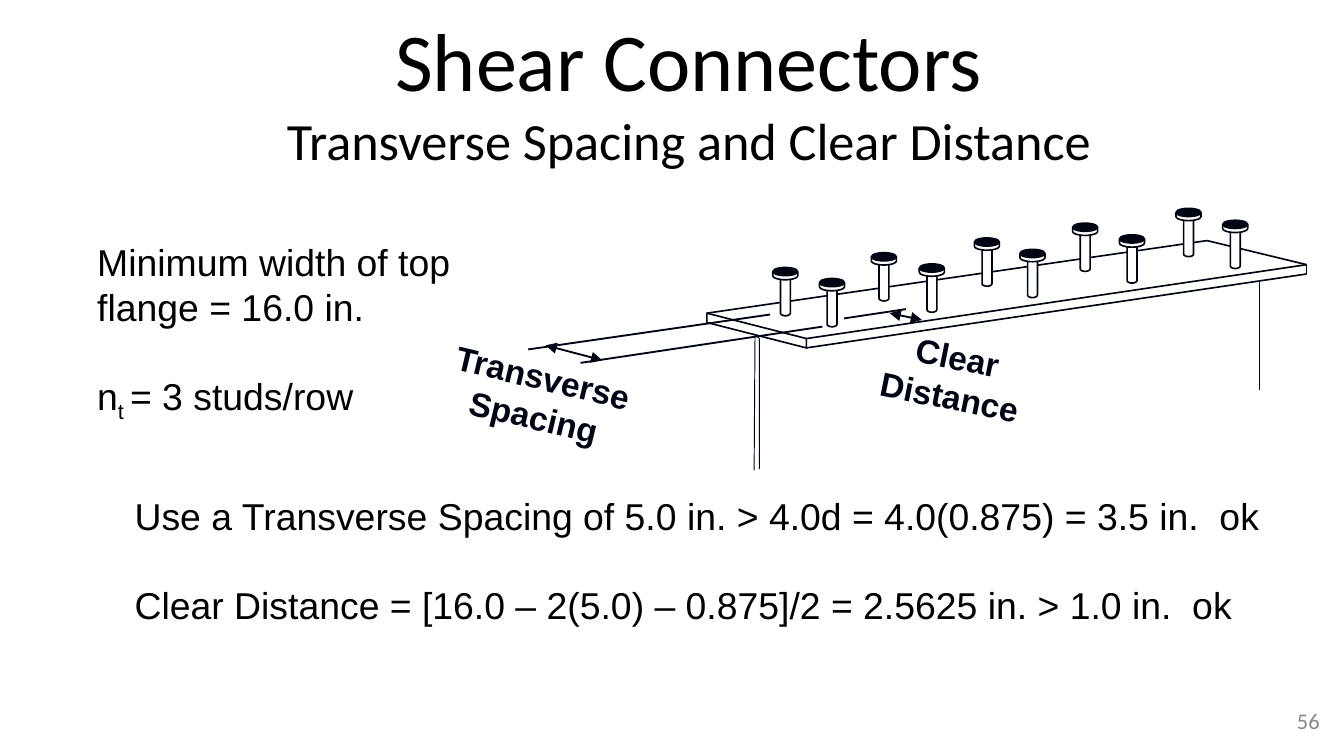
from math import cos, pi, sin

from pptx import Presentation
from pptx.dml.color import RGBColor
from pptx.enum.shapes import MSO_CONNECTOR, MSO_SHAPE
from pptx.enum.text import MSO_ANCHOR, MSO_AUTO_SIZE, PP_ALIGN
from pptx.oxml.ns import qn
from pptx.util import Pt
from lxml.etree import SubElement

INK = "000514"
BLACK = "000000"
GRAY = "898989"
OUTLINE = 0.88
THIN = 0.5

# Left edges of the stud heads; the tops fall by an equal step along each row.
FAR_ROW = {"lefts": [414, 466.8, 522, 574.6, 630], "top": 143.3, "step": -7.92}
NEAR_ROW = {"lefts": [439, 492.5, 546.4, 599.7, 655], "top": 149.2, "step": -7.8}
HEAD_WIDTH, HEAD_HEIGHT = 13.4, 4.4
SHANK_INSET, SHANK_WIDTH = 4.1, 5.3
FLANGE_THICKNESS = 5


def color(value):
    return RGBColor.from_string(value)


def set_line(shape, width):
    shape.line.color.rgb = color(INK)
    shape.line.width = Pt(width)


def add_line(shapes, start, end, width=OUTLINE, arrows=False):
    points = [Pt(value) for value in (*start, *end)]
    connector = shapes.add_connector(MSO_CONNECTOR.STRAIGHT, *points)
    set_line(connector, width)
    if arrows:
        line = connector.line._get_or_add_ln()
        for tag in ("a:headEnd", "a:tailEnd"):
            SubElement(line, qn(tag), type="triangle", w="med", len="med")
    SubElement(connector._element.spPr, qn("a:effectLst"))


def add_outline(shapes, points, width=OUTLINE, close=False):
    points = [(Pt(x), Pt(y)) for x, y in points]
    builder = shapes.build_freeform(*points[0])
    builder.add_line_segments(points[1:], close=close)
    shape = builder.convert_to_shape()
    shape.shadow.inherit = False
    shape.fill.background()
    set_line(shape, width)


def add_cup(shapes, left, top, width, side, sag):
    """Draw two upright sides joined below by half an ellipse."""
    radius = width / 2
    angles = [pi * step / 12 for step in range(13)]
    curve = [(left + radius - radius * cos(angle), top + side + sag * sin(angle))
             for angle in angles]
    add_outline(shapes, [(left, top), *curve, (left + width, top)])


def add_stud(shapes, left, top):
    box = [Pt(value) for value in (left, top, HEAD_WIDTH, HEAD_HEIGHT)]
    head = shapes.add_shape(MSO_SHAPE.OVAL, *box)
    head.shadow.inherit = False
    head.fill.solid()
    head.fill.fore_color.rgb = color(INK)
    set_line(head, OUTLINE)
    add_cup(shapes, left, top + 2.2, HEAD_WIDTH, 2.2, 2.2)
    add_cup(shapes, left + SHANK_INSET, top + 6.5, SHANK_WIDTH, 18, 1.4)


def add_broken_line(shapes, start, end, shanks):
    """Draw a line from left to right that is hidden behind the shanks."""
    slope = (end[1] - start[1]) / (end[0] - start[0])
    stops = [start[0]]
    for left, right in shanks:
        if start[0] < left and right < end[0]:
            stops += [left, right]
    stops.append(end[0])
    for x1, x2 in zip(stops[::2], stops[1::2]):
        add_line(shapes, *[(x, start[1] + slope * (x - start[0])) for x in (x1, x2)])


def add_flange(shapes, shanks):
    back_left, back_right = (378.7, 167.8), (646.6, 128.9)
    front_left, front_right = (432, 181.4), (700, 141.8)

    def lower(point):
        return point[0], point[1] + FLANGE_THICKNESS

    add_outline(shapes, [back_left, front_left, lower(front_left), lower(back_left)],
                close=True)
    add_line(shapes, front_left, front_right)
    add_line(shapes, lower(front_left), lower(front_right))
    add_line(shapes, front_right, lower(front_right))
    add_broken_line(shapes, back_left, back_right, shanks)
    # The right end is crossed only by the last stud of the near row.
    add_broken_line(shapes, back_right, front_right, shanks[-1:])


def add_web(shapes):
    add_line(shapes, (674.6, 151.2), (674.6, 208.8), THIN)
    add_line(shapes, (404.5, 179.3), (404, 252), THIN)
    add_outline(shapes, [(405.4, 180), (406.8, 181.4), (406.8, 251.3)], THIN)


def add_dimensions(shapes):
    for start, end in [((283, 187.2), (412.6, 168.5)),
                       ((311, 194.4), (440.6, 175)),
                       ((452.2, 170.6), (485.3, 165.6))]:
        add_line(shapes, start, end, 1)
    for start, end in [((292.3, 185), (322.6, 193)),
                       ((476.6, 167.8), (493.9, 171.4))]:
        add_line(shapes, start, end, 1, arrows=True)


def add_girder(slide):
    shapes = slide.shapes.add_group_shape().shapes
    studs = [(left, row["top"] + row["step"] * index)
             for row in (FAR_ROW, NEAR_ROW)
             for index, left in enumerate(row["lefts"])]
    for left, top in studs:
        add_stud(shapes, left, top)
    shanks = sorted((left + SHANK_INSET, left + SHANK_INSET + SHANK_WIDTH)
                    for left, _ in studs)
    add_flange(shapes, shanks)
    add_web(shapes)
    add_dimensions(shapes)


def format_font(font, size, font_name, text_color, bold=False):
    font.size = Pt(size)
    font.name = font_name
    font.bold = bold
    font.color.rgb = color(text_color)


def add_text(slide, box, paragraphs, size=20, font_name="Arial", text_color=BLACK,
             bold=False, align=PP_ALIGN.LEFT, anchor=MSO_ANCHOR.TOP,
             rotation=0, inset=True, gap=23.5):
    """Add a text box; a paragraph is a list of (text, is_subscript) runs."""
    shape = slide.shapes.add_textbox(*[Pt(value) for value in box])
    shape.rotation = rotation
    frame = shape.text_frame
    frame.word_wrap = True
    frame.vertical_anchor = anchor
    if not inset:
        frame.margin_left = frame.margin_right = 0
        frame.margin_top = frame.margin_bottom = 0
    for index, runs in enumerate(paragraphs):
        paragraph = frame.add_paragraph() if index else frame.paragraphs[0]
        paragraph.alignment = align
        if index:
            paragraph.space_before = Pt(gap)
        for text, is_subscript in runs:
            run = paragraph.add_run()
            run.text = text
            format_font(run.font, size, font_name, text_color, bold)
            if is_subscript:
                run._r.get_or_add_rPr().set("baseline", "-25000")


def fill_title(slide):
    title = slide.shapes.title
    title.left, title.top, title.width, title.height = Pt(45), Pt(0), Pt(648), Pt(68)
    frame = title.text_frame
    frame.auto_size = MSO_AUTO_SIZE.NONE
    frame.vertical_anchor = MSO_ANCHOR.TOP
    frame.margin_top = Pt(5)
    paragraph = frame.paragraphs[0]
    paragraph.alignment = PP_ALIGN.CENTER
    heading = paragraph.add_run()
    heading.text = "Shear Connectors"
    format_font(heading.font, 44, "Calibri", BLACK)
    paragraph.add_line_break()
    subtitle = paragraph.add_run()
    subtitle.text = "Transverse Spacing and Clear Distance"
    format_font(subtitle.font, 28, "Calibri", BLACK)


def main():
    presentation = Presentation()
    presentation.slide_width, presentation.slide_height = Pt(720), Pt(405)
    slide = presentation.slides.add_slide(presentation.slide_layouts[5])
    fill_title(slide)
    add_text(slide, (546, 375, 168, 21.6), [[("56", False)]], size=12,
             font_name="Calibri", text_color=GRAY, align=PP_ALIGN.RIGHT,
             anchor=MSO_ANCHOR.MIDDLE)
    add_text(slide, (65, 260.6, 633, 80), [
        [("Use a Transverse Spacing of 5.0 in. > 4.0d = 4.0(0.875) = 3.5 in.  ok", False)],
        [("Clear Distance = [16.0 – 2(5.0) – 0.875]/2 = 2.5625 in. > 1.0 in.  ok", False)],
    ])
    add_girder(slide)
    for label, left, top, rotation in [("Transverse Spacing", 229, 190.8, 13.4),
                                       ("Clear Distance", 451.4, 180, 11.4)]:
        add_text(slide, (left, top, 118.8, 44), [[(label, False)]], size=18,
                 text_color=INK, bold=True, align=PP_ALIGN.CENTER,
                 rotation=rotation, inset=False)
    add_text(slide, (45, 124.6, 216, 128), [
        [("Minimum width of top flange = 16.0 in.", False)],
        [("n", False), ("t ", True), ("= 3 studs/row", False)],
    ])
    presentation.save("out.pptx")


if __name__ == "__main__":
    main()
